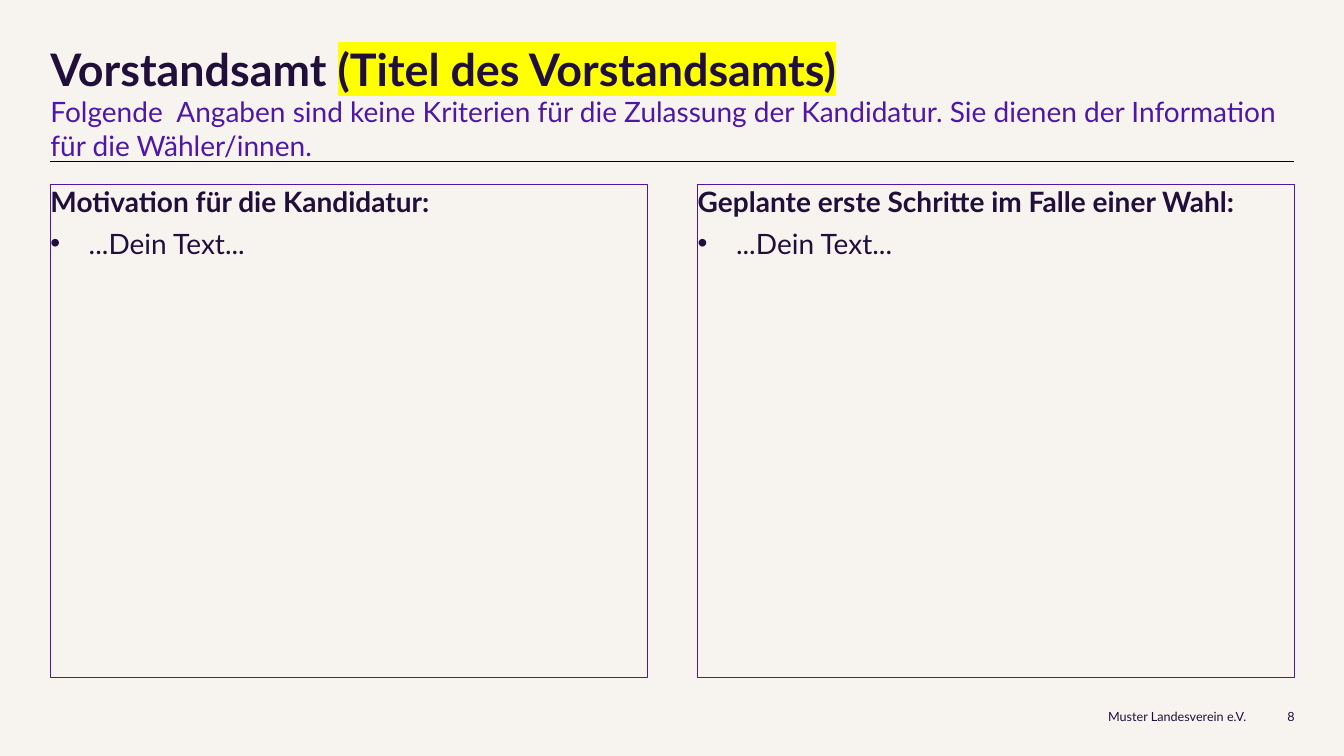
from dataclasses import dataclass

from pptx import Presentation
from pptx.dml.color import RGBColor
from pptx.enum.shapes import MSO_CONNECTOR, MSO_SHAPE
from pptx.enum.text import MSO_ANCHOR, PP_ALIGN
from pptx.oxml.ns import qn
from pptx.slide import Slide
from pptx.text.text import TextFrame, _Paragraph, _Run
from pptx.util import Emu, Pt
from lxml import etree

TOP, MIDDLE = MSO_ANCHOR.TOP, MSO_ANCHOR.MIDDLE
LEFT, RIGHT = PP_ALIGN.LEFT, PP_ALIGN.RIGHT
RECTANGLE, STRAIGHT = MSO_SHAPE.RECTANGLE, MSO_CONNECTOR.STRAIGHT
EMU_PER_PX = 9144
FONT = "Lato"
COLORS = {
    "background": "F7F4EF",
    "text": "200F3B",
    "accent": "4F17A8",
    "rule": "000000",
    "highlight": "FFFF00",
}
MARGIN, CONTENT_WIDTH = 50, 1233
PANEL_TOP, PANEL_WIDTH, PANEL_HEIGHT, PANEL_STEP = 183, 592, 489, 642
BULLET_INDENT = 38
PLACEHOLDER_TEXT = "...Dein Text..."


@dataclass(frozen=True)
class Box:
    left: int
    top: int
    width: int
    height: int

    def to_emu(self) -> tuple[Emu, Emu, Emu, Emu]:
        return px(self.left), px(self.top), px(self.width), px(self.height)


@dataclass(frozen=True)
class Label:
    box: Box
    text: str
    size: int
    color: str = "text"
    bold: bool = False
    align: PP_ALIGN = LEFT
    anchor: MSO_ANCHOR = TOP
    space_before: int = 0
    line_spacing: float = 1.0


TITLE = Label(Box(MARGIN, 47, CONTENT_WIDTH, 48), "Vorstandsamt ", 32,
              bold=True, line_spacing=0.9)
TITLE_HIGHLIGHT = "(Titel des Vorstandsamts)"
SUBTITLE = Label(
    Box(MARGIN, 94, CONTENT_WIDTH, 67),
    "Folgende  Angaben sind keine Kriterien für die Zulassung der Kandidatur. "
    "Sie dienen der Information für die Wähler/innen.",
    20, "accent", space_before=6)
FOOTERS = [
    Label(Box(938, 671, 298, 79), "Muster Landesverein e.V.", 9, align=RIGHT, anchor=MIDDLE),
    Label(Box(1236, 671, 48, 79), "8", 9, align=RIGHT, anchor=MIDDLE),
]
PANEL_HEADINGS = [
    "Motivation für die Kandidatur:",
    "Geplante erste Schritte im Falle einer Wahl:",
]


def px(length: int) -> Emu:
    return Emu(length * EMU_PER_PX)


def rgb(name: str) -> RGBColor:
    return RGBColor.from_string(COLORS[name])


def prepare_frame(frame: TextFrame, anchor: MSO_ANCHOR) -> None:
    frame.word_wrap = True
    frame.vertical_anchor = anchor
    frame.margin_left = frame.margin_top = frame.margin_right = frame.margin_bottom = 0


def format_run(run: _Run, size: int, color: str, bold: bool) -> None:
    run.font.name = FONT
    run.font.size = Pt(size)
    run.font.bold = bold
    run.font.color.rgb = rgb(color)


def highlight_run(run: _Run) -> None:
    highlight = etree.Element(qn("a:highlight"))
    etree.SubElement(highlight, qn("a:srgbClr"), val=COLORS["highlight"])
    run.font._element.find(qn("a:solidFill")).addnext(highlight)


def add_bullet(paragraph: _Paragraph) -> None:
    properties = paragraph._p.get_or_add_pPr()
    properties.set("marL", str(px(BULLET_INDENT)))
    properties.set("indent", str(-px(BULLET_INDENT)))
    etree.SubElement(properties, qn("a:buFont"), typeface="Arial")
    etree.SubElement(properties, qn("a:buChar"), char="•")


def draw_label(slide: Slide, label: Label) -> _Paragraph:
    frame = slide.shapes.add_textbox(*label.box.to_emu()).text_frame
    prepare_frame(frame, label.anchor)
    paragraph = frame.paragraphs[0]
    paragraph.text = label.text
    paragraph.alignment = label.align
    paragraph.space_before = Pt(label.space_before)
    paragraph.line_spacing = label.line_spacing
    format_run(paragraph.runs[0], label.size, label.color, label.bold)
    return paragraph


def draw_title(slide: Slide) -> None:
    run = draw_label(slide, TITLE).add_run()
    run.text = TITLE_HIGHLIGHT
    format_run(run, TITLE.size, TITLE.color, TITLE.bold)
    highlight_run(run)


def draw_rule(slide: Slide) -> None:
    rule = slide.shapes.add_connector(
        STRAIGHT, px(MARGIN), px(160), px(MARGIN + CONTENT_WIDTH), px(160))
    rule.line.color.rgb = rgb("rule")
    rule.line.width = Pt(0.5)
    etree.SubElement(rule._element.spPr, qn("a:effectLst"))


def draw_panel(slide: Slide, box: Box, heading: str) -> None:
    panel = slide.shapes.add_shape(RECTANGLE, *box.to_emu())
    panel.shadow.inherit = False
    panel.fill.background()
    panel.line.color.rgb = rgb("accent")
    panel.line.width = Pt(0.75)
    frame = panel.text_frame
    prepare_frame(frame, TOP)
    frame.text = f"{heading}\n{PLACEHOLDER_TEXT}"
    for index, paragraph in enumerate(frame.paragraphs):
        paragraph.alignment = LEFT
        paragraph.space_before = Pt(6)
        format_run(paragraph.runs[0], 20, "text", index == 0)
    add_bullet(frame.paragraphs[1])


def main() -> None:
    presentation = Presentation()
    presentation.slide_width, presentation.slide_height = px(1333), px(750)
    slide = presentation.slides.add_slide(presentation.slide_layouts[6])
    slide.background.fill.solid()
    slide.background.fill.fore_color.rgb = rgb("background")
    draw_rule(slide)
    for label in [*FOOTERS, SUBTITLE]:
        draw_label(slide, label)
    draw_title(slide)
    for column, heading in enumerate(PANEL_HEADINGS):
        left = MARGIN + column * PANEL_STEP
        draw_panel(slide, Box(left, PANEL_TOP, PANEL_WIDTH, PANEL_HEIGHT), heading)
    presentation.save("out.pptx")


if __name__ == "__main__":
    main()
